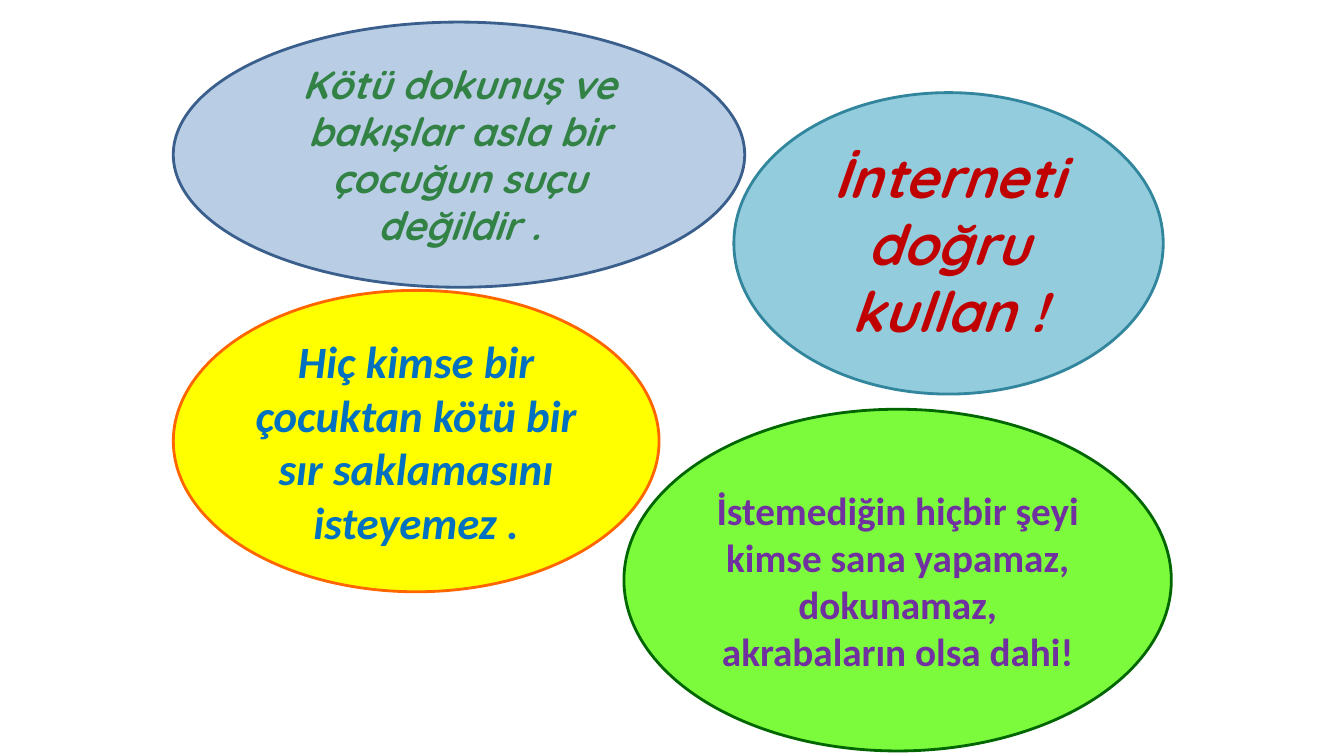
from pptx import Presentation
from pptx.dml.color import RGBColor
from pptx.enum import shapes, text
from pptx.util import Pt

PALE_BLUE = RGBColor(0xB9, 0xCD, 0xE5)
NAVY = RGBColor(0x3A, 0x5F, 0x8C)
GREEN = RGBColor(0x32, 0x82, 0x45)
AQUA = RGBColor(0x93, 0xCD, 0xDD)
TEAL = RGBColor(0x31, 0x85, 0x9C)
RED = RGBColor(0xC0, 0x00, 0x00)
YELLOW = RGBColor(0xFF, 0xFF, 0x00)
ORANGE = RGBColor(0xFF, 0x66, 0x00)
BLUE = RGBColor(0x00, 0x70, 0xC0)
LIME = RGBColor(0x7C, 0xFB, 0x3D)
DARK_GREEN = RGBColor(0x00, 0x66, 0x00)
PURPLE = RGBColor(0x70, 0x30, 0xA0)

MESSAGES = [
    ("Kötü dokunuş ve bakışlar asla bir çocuğun suçu değildir .",
     (123.8, 15.8, 408.2, 189.4), PALE_BLUE, NAVY,
     dict(font="Quicksand", size=28, color=GREEN, italic=True)),
    ("İnterneti doğru kullan !",
     (524.2, 66.2, 306.7, 215.3), AQUA, TEAL,
     dict(font="Quicksand", size=40, color=RED, italic=True)),
    ("Hiç kimse bir çocuktan kötü bir sır saklamasını isteyemez .",
     (123.8, 207.4, 347, 215.3), YELLOW, ORANGE,
     dict(font="Calibri", size=32, color=BLUE, italic=True)),
    ("İstemediğin hiçbir şeyi kimse sana yapamaz, dokunamaz, akrabaların olsa dahi!",
     (445.7, 292.3, 391, 244.1), LIME, DARK_GREEN,
     dict(font="Calibri", size=28, color=PURPLE)),
]


def write(shape, wording, *, font, size, color, bold=True, italic=False):
    frame = shape.text_frame
    frame.word_wrap = True
    frame.vertical_anchor = text.MSO_ANCHOR.MIDDLE
    paragraph = frame.paragraphs[0]
    paragraph.alignment = text.PP_ALIGN.CENTER
    run = paragraph.add_run()
    run.text = wording
    run.font.name = font
    run.font.size = Pt(size)
    run.font.color.rgb = color
    run.font.bold = bold
    run.font.italic = italic


presentation = Presentation()
presentation.slide_width = Pt(960)
presentation.slide_height = Pt(540)
slide = presentation.slides.add_slide(presentation.slide_layouts[6])

for wording, box, fill, outline, style in MESSAGES:
    oval = slide.shapes.add_shape(shapes.MSO_SHAPE.OVAL, *map(Pt, box))
    oval.shadow.inherit = False
    oval.fill.solid()
    oval.fill.fore_color.rgb = fill
    oval.line.color.rgb = outline
    oval.line.width = Pt(2)
    write(oval, wording, **style)

presentation.save("out.pptx")
